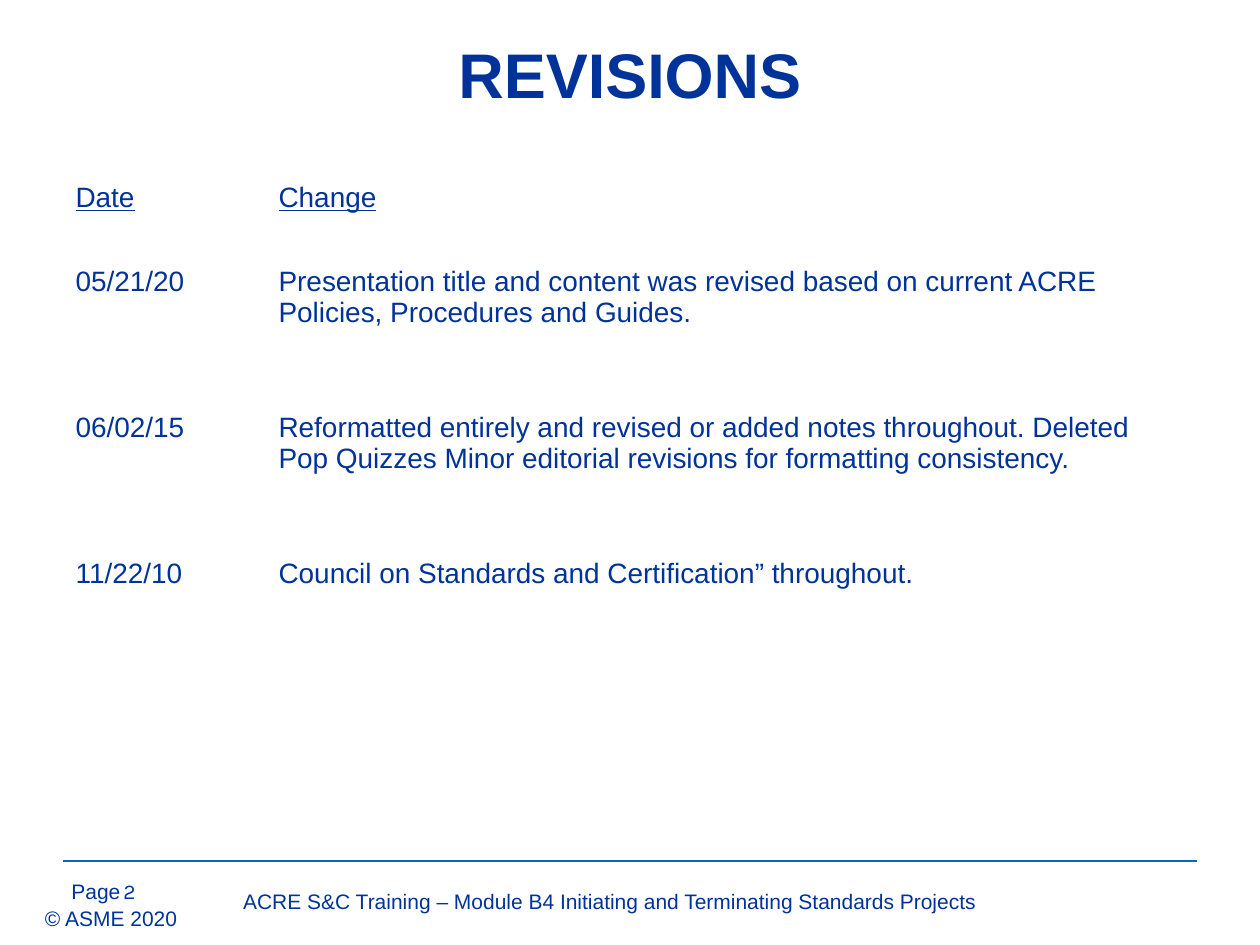
from lxml.etree import SubElement
from pptx import Presentation
from pptx.dml.color import RGBColor
from pptx.enum.shapes import MSO_CONNECTOR
from pptx.enum.text import MSO_ANCHOR, PP_ALIGN
from pptx.oxml.ns import qn
from pptx.util import Emu, Pt

PX = 914400 // 126
COLORS = {"text": "003399", "rule": "0066CC", "cell": "FFFFFF"}
NO_STYLE_NO_GRID = "{2D5ABB26-0587-4C30-8999-92F81FD0307C}"


def px(*values):
    return [Emu(value * PX) for value in values]


def add_text(frame, text, size, font="Arial", bold=False, underline=False, align=PP_ALIGN.LEFT):
    paragraph = frame.paragraphs[0]
    paragraph.alignment = align
    run = paragraph.add_run()
    run.text = text
    run.font.name = font
    run.font.size = Pt(size)
    run.font.bold = bold
    run.font.underline = underline
    run.font.color.rgb = RGBColor.from_string(COLORS["text"])


presentation = Presentation()
presentation.slide_width, presentation.slide_height = px(1260, 945)
slide = presentation.slides.add_slide(presentation.slide_layouts[5])

# Title
title = slide.shapes.title
title.left, title.top, title.width, title.height = px(126, 42, 1008, 63)
title.text_frame.vertical_anchor = MSO_ANCHOR.MIDDLE
add_text(title.text_frame, "REVISIONS", 36, bold=True, align=PP_ALIGN.CENTER)

# Revision table
rows = [
    ("Date", "Change"),
    ("05/21/20", "Presentation title and content was revised based on current ACRE "
                 "Policies, Procedures and Guides."),
    ("06/02/15", "Reformatted entirely and revised or added notes throughout. Deleted "
                 "Pop Quizzes Minor editorial revisions for formatting consistency."),
    ("11/22/10", "Council on Standards and Certification” throughout."),
]
table = slide.shapes.add_table(len(rows), 2, *px(63, 176, 1134, 502)).table
table.first_row = table.horz_banding = False
table._tbl.tblPr.find(qn("a:tableStyleId")).text = NO_STYLE_NO_GRID
for column, width in zip(table.columns, px(203, 931)):
    column.width = width
for row, height in zip(table.rows, px(84, 146, 146, 126)):
    row.height = height
for row_index, values in enumerate(rows):
    for column_index, value in enumerate(values):
        cell = table.cell(row_index, column_index)
        cell.fill.solid()
        cell.fill.fore_color.rgb = RGBColor.from_string(COLORS["cell"])
        add_text(cell.text_frame, value, 16, underline=row_index == 0)

# Footer rule
rule = slide.shapes.add_connector(MSO_CONNECTOR.STRAIGHT, *px(63, 861, 1197, 861))
rule.line.color.rgb = RGBColor.from_string(COLORS["rule"])
rule.line.width = Pt(0.75)
SubElement(rule._element.spPr, qn("a:effectLst"))

# Footer texts: text, box, font, alignment, wrap, has insets
footers = [
    ("Page", (59, 872, 97, 33), "Arial", PP_ALIGN.LEFT, True, True),
    ("2", (111, 872, 59, 29), "Karla", PP_ALIGN.LEFT, True, True),
    ("© ASME 2020", (45, 906, 134, 25), "Arial", PP_ALIGN.LEFT, False, False),
    ("ACRE S&C Training – Module B4 Initiating and Terminating Standards Projects",
     (190, 882, 840, 33), "Arial", PP_ALIGN.CENTER, True, True),
]
for text, box, font, align, wrap, has_insets in footers:
    frame = slide.shapes.add_textbox(*px(*box)).text_frame
    frame.word_wrap = wrap
    if not has_insets:
        frame.margin_left = frame.margin_top = frame.margin_right = frame.margin_bottom = 0
    add_text(frame, text, 12, font, align=align)

presentation.save("out.pptx")
